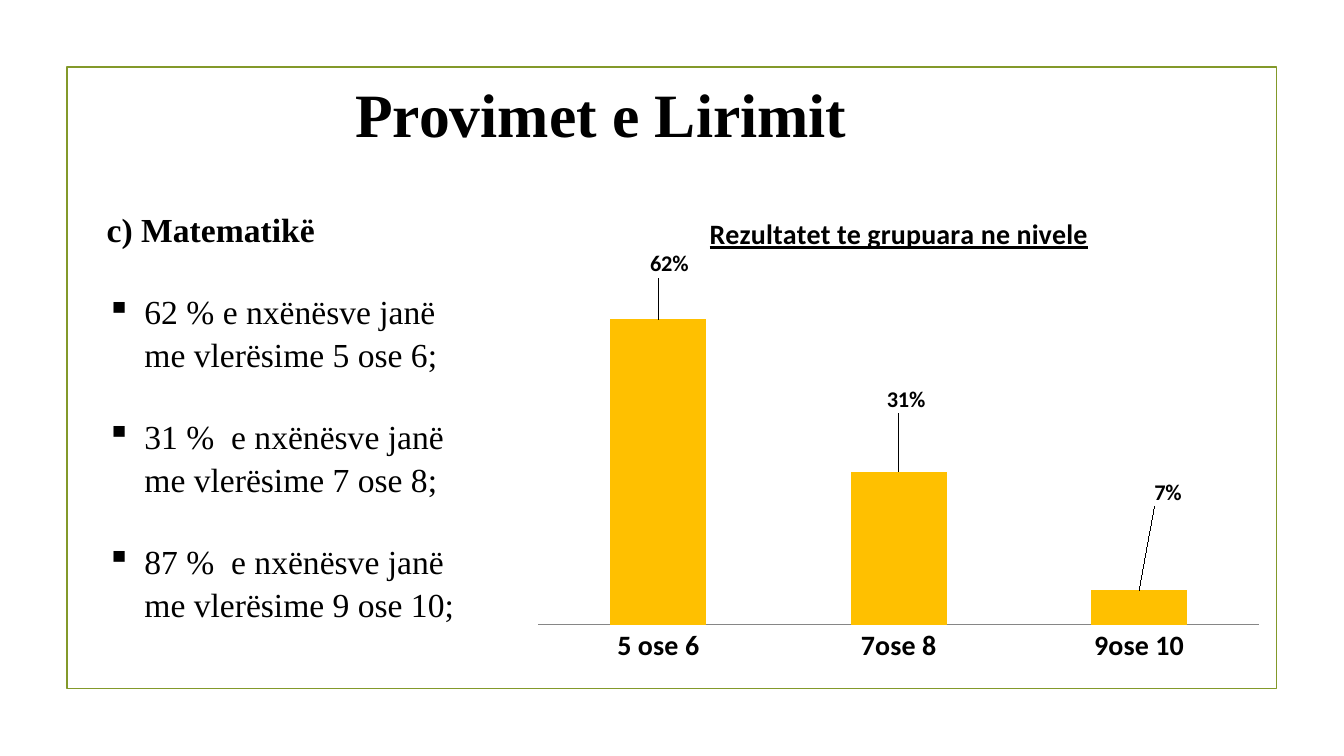
import pptx
import pptx.chart.data
import pptx.dml.color
import pptx.enum.chart
import pptx.enum.shapes
import pptx.enum.text
import pptx.oxml
import pptx.oxml.ns
import pptx.util
from pptx.util import Cm

COLOURS = {"text": "000000", "frame": "83992A", "bar": "FFC000", "axis": "868686"}
SERIF, SANS = "Times New Roman", "Calibri"

FINDINGS = [
    "62 % e nxënësve janë me vlerësime 5 ose 6;",
    "31 %  e nxënësve janë me vlerësime 7 ose 8;",
    "87 %  e nxënësve janë me vlerësime 9 ose 10;",
]
# Level, share of pupils, label shift as a fraction of the chart's size
LEVELS = [
    ("5 ose 6", 0.62, (0.015, -0.075)),
    ("7ose 8", 0.31, (0.01, -0.11)),
    ("9ose 10", 0.07, (0.04, -0.16)),
]


def colour(name):
    return pptx.dml.color.RGBColor.from_string(COLOURS[name])


def style(font, face, size, bold=False):
    font.name, font.size, font.bold = face, pptx.util.Pt(size), bold
    font.color.rgb = colour("text")


def add_run(paragraph, text, face, size, bold=False):
    run = paragraph.add_run()
    run.text = text
    style(run.font, face, size, bold)
    return run


def add_bullet(paragraph, indent):
    properties = paragraph._p.get_or_add_pPr()
    properties.set("marL", str(int(indent)))
    properties.set("indent", str(-int(indent)))
    bullet = pptx.oxml.parse_xml(
        f'<a:buChar {pptx.oxml.ns.nsdecls("a")} char="▪"/>')
    properties.append(bullet)


def add_frame(slide, box):
    frame = slide.shapes.add_shape(pptx.enum.shapes.MSO_SHAPE.RECTANGLE, *box)
    frame.shadow.inherit = False
    frame.fill.background()
    frame.line.color.rgb = colour("frame")
    frame.line.width = pptx.util.Pt(1.25)


def add_heading(slide, box):
    heading = slide.shapes.add_textbox(*box).text_frame
    heading.word_wrap = True
    heading.margin_left = heading.margin_right = 0
    heading.margin_top = heading.margin_bottom = 0
    heading.vertical_anchor = pptx.enum.text.MSO_ANCHOR.BOTTOM
    paragraph = heading.paragraphs[0]
    paragraph.alignment = pptx.enum.text.PP_ALIGN.CENTER
    add_run(paragraph, "Provimet e Lirimit", SERIF, 44, True)


def add_findings(slide, box):
    findings = slide.shapes.add_textbox(*box).text_frame
    findings.word_wrap = True
    subject = findings.paragraphs[0]
    subject.line_spacing = 1.07
    add_run(subject, "c) Matematikë", SERIF, 24, True)
    for finding in FINDINGS:
        paragraph = findings.add_paragraph()
        paragraph.line_spacing = 1.07
        paragraph.space_before = pptx.util.Pt(27.5)
        add_bullet(paragraph, Cm(0.95))
        add_run(paragraph, finding, SERIF, 24)


def manual_layout(**settings):
    entries = "".join(f'<c:{key} val="{value}"/>' for key, value in settings.items())
    return pptx.oxml.parse_xml(
        f'<c:layout {pptx.oxml.ns.nsdecls("c")}>'
        f"<c:manualLayout>{entries}</c:manualLayout></c:layout>")


def shift_label(point, shift):
    """Moves a point's value label away from its default place."""
    point.data_label.position = pptx.enum.chart.XL_LABEL_POSITION.OUTSIDE_END
    style(point.data_label.font, SANS, 16, True)
    label = point.data_label._get_or_add_dLbl()
    label.find(pptx.oxml.ns.qn("c:idx")).addnext(
        manual_layout(x=shift[0], y=shift[1]))


def add_results_chart(slide, box):
    results = pptx.chart.data.CategoryChartData(number_format="0%")
    results.categories = [level for level, _, _ in LEVELS]
    results.add_series("Series 1", [share for _, share, _ in LEVELS])
    chart = slide.shapes.add_chart(
        pptx.enum.chart.XL_CHART_TYPE.COLUMN_CLUSTERED, *box, results).chart
    style(chart.font, SANS, 10)
    chart.has_legend = False

    chart.has_title = True
    title = chart.chart_title.text_frame.paragraphs[0]
    add_run(title, "Rezultatet te grupuara ne nivele", SANS, 20, True).font.underline = True

    no_ticks = pptx.enum.chart.XL_TICK_MARK.NONE
    levels = chart.category_axis
    levels.major_tick_mark = no_ticks
    style(levels.tick_labels.font, SANS, 20, True)
    levels.format.line.color.rgb = colour("axis")
    levels.format.line.width = pptx.util.Pt(0.75)

    shares = chart.value_axis
    shares.minimum_scale, shares.maximum_scale = 0, 0.7
    shares.has_major_gridlines = False
    shares.visible = False

    plot = chart.plots[0]
    plot.gap_width = 150
    plot.vary_by_categories = False
    bars = plot.series[0]
    bars.format.fill.solid()
    bars.format.fill.fore_color.rgb = colour("bar")
    labels = bars.data_labels
    labels.show_value = True
    labels.number_format, labels.number_format_is_linked = "0%", False
    style(labels.font, SANS, 16, True)
    for index, (_, _, shift) in enumerate(LEVELS):
        shift_label(bars.points[index], shift)

    plot_area = chart._chartSpace.chart.plotArea
    for layout in plot_area.findall(pptx.oxml.ns.qn("c:layout")):
        plot_area.remove(layout)
    plot_area.insert(0, manual_layout(
        layoutTarget="inner", xMode="edge", yMode="edge", x=0, y=0.174, w=1, h=0.695))


def main():
    presentation = pptx.Presentation()
    presentation.slide_width, presentation.slide_height = Cm(33.87), Cm(19.05)
    slide = presentation.slides.add_slide(presentation.slide_layouts[6])
    add_frame(slide, (Cm(1.69), Cm(1.69), Cm(30.48), Cm(15.66)))
    add_heading(slide, (Cm(2.34), Cm(1.9), Cm(25.63), Cm(1.88)))
    add_findings(slide, (Cm(2.44), Cm(5.08), Cm(9.96), Cm(10.52)))
    add_results_chart(slide, (Cm(13.55), Cm(4.88), Cm(18.2), Cm(12.5)))
    presentation.save("out.pptx")


if __name__ == "__main__":
    main()
